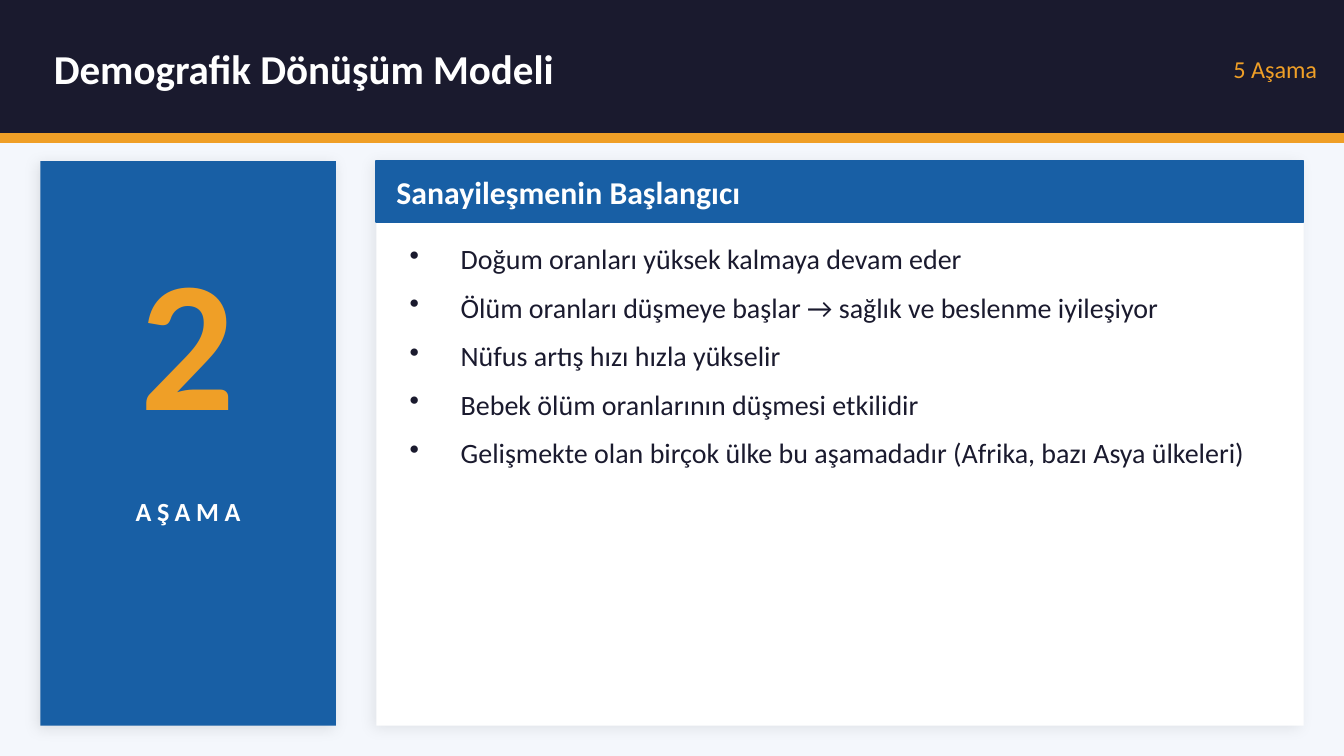
from lxml import etree
from pptx import Presentation
from pptx.dml.color import RGBColor
from pptx.enum import shapes, text
from pptx.oxml import ns
from pptx.util import Pt

# Content
TITLE = "Demografik Dönüşüm Modeli"
STAGE_COUNT = "5 Aşama"
STAGE_NUMBER = "2"
STAGE_LABEL = "AŞAMA"
CARD_HEADING = "Sanayileşmenin Başlangıcı"
CARD_POINTS = [
    "Doğum oranları yüksek kalmaya devam eder",
    "Ölüm oranları düşmeye başlar → sağlık ve beslenme iyileşiyor",
    "Nüfus artış hızı hızla yükselir",
    "Bebek ölüm oranlarının düşmesi etkilidir",
    "Gelişmekte olan birçok ülke bu aşamadadır (Afrika, bazı Asya ülkeleri)",
]

# Style and layout, in points
COLORS = {"navy": "1A1A2E", "orange": "EF9F27", "blue": "185FA5",
          "white": "FFFFFF", "page": "F4F7FC", "shadow": "000000"}
FONT = "Calibri"
WIDTH, HEIGHT = 720, 405
BAND_HEIGHT, STRIPE_HEIGHT = 72, 4.32
PANEL_TOP, PANEL_HEIGHT = 86.4, 302.4
STAGE_LEFT, STAGE_WIDTH = 21.6, 158.4
CARD_LEFT, CARD_WIDTH = 201.6, 496.8
HEADING_HEIGHT = 32.4
CARD_PAD = 10.8
BULLET_INDENT = 27.36
LEFT, CENTER, RIGHT = (text.PP_ALIGN.LEFT, text.PP_ALIGN.CENTER,
                       text.PP_ALIGN.RIGHT)
MIDDLE, TOP = text.MSO_ANCHOR.MIDDLE, text.MSO_ANCHOR.TOP


def color(name):
    return RGBColor.from_string(COLORS[name])


def add_shadow(panel, opacity):
    effects = panel._element.spPr.find(ns.qn("a:effectLst"))
    outer = etree.SubElement(
        effects, ns.qn("a:outerShdw"), blurRad=str(Pt(8)), dist=str(Pt(2)),
        dir=str(135 * 60000), algn="bl", rotWithShape="0")
    tint = etree.SubElement(outer, ns.qn("a:srgbClr"), val=COLORS["shadow"])
    etree.SubElement(tint, ns.qn("a:alpha"), val=str(opacity * 1000))


def add_panel(slide, box, fill, outlined=True, shadow_opacity=0):
    panel = slide.shapes.add_shape(shapes.MSO_SHAPE.RECTANGLE, *map(Pt, box))
    panel.shadow.inherit = False
    panel.fill.solid()
    panel.fill.fore_color.rgb = color(fill)
    if outlined:
        panel.line.color.rgb = color(fill)
        panel.line.width = Pt(1)
    else:
        panel.line.fill.background()
    if shadow_opacity:
        add_shadow(panel, shadow_opacity)


def add_bullet(paragraph):
    properties = paragraph._p.get_or_add_pPr()
    properties.set("marL", str(Pt(BULLET_INDENT)))
    properties.set("indent", str(-Pt(BULLET_INDENT)))
    etree.SubElement(properties, ns.qn("a:buChar"), char="•")


def write(holder, lines, size, ink, bold=False, align=LEFT, anchor=MIDDLE,
          inset=True, bullets=False, spacing=0):
    frame = holder.text_frame
    frame_format = {"word_wrap": True, "vertical_anchor": anchor,
                    "auto_size": text.MSO_AUTO_SIZE.NONE}
    if not inset:
        for side in ("left", "top", "right", "bottom"):
            frame_format[f"margin_{side}"] = 0
    for name, value in frame_format.items():
        setattr(frame, name, value)

    for index, line in enumerate(lines):
        paragraph = frame.add_paragraph() if index else frame.paragraphs[0]
        paragraph.alignment = align
        if bullets:
            paragraph.space_after = Pt(8)
            add_bullet(paragraph)
        run = paragraph.add_run()
        run.text = line
        for name, value in {"name": FONT, "size": Pt(size),
                            "bold": bold}.items():
            setattr(run.font, name, value)
        run.font.color.rgb = color(ink)
        if spacing:
            run._r.get_or_add_rPr().set("spc", str(spacing * 100))


def add_text(slide, box, lines, size, ink, **options):
    write(slide.shapes.add_textbox(*map(Pt, box)), lines, size, ink, **options)


def add_title(slide, box):
    title = slide.shapes.title
    title.left, title.top, title.width, title.height = map(Pt, box)
    # Bring the title in front of the header band
    slide.shapes._spTree.append(title._element)
    write(title, [TITLE], 22, "white", bold=True, inset=False)


def main():
    deck = Presentation()
    deck.slide_width, deck.slide_height = Pt(WIDTH), Pt(HEIGHT)
    slide = deck.slides.add_slide(deck.slide_layouts[5])
    slide.background.fill.solid()
    slide.background.fill.fore_color.rgb = color("page")

    # Header
    add_panel(slide, (0, 0, WIDTH, BAND_HEIGHT), "navy")
    add_panel(slide, (0, BAND_HEIGHT, WIDTH, STRIPE_HEIGHT), "orange")
    add_title(slide, (28.8, 7.2, 540, 59.04))
    add_text(slide, (561.6, 7.2, 144, 59.04), [STAGE_COUNT], 13, "orange",
             align=RIGHT, inset=False)

    # Stage panel
    add_panel(slide, (STAGE_LEFT, PANEL_TOP, STAGE_WIDTH, PANEL_HEIGHT),
              "blue", outlined=False, shadow_opacity=10)
    add_text(slide, (STAGE_LEFT, 108, STAGE_WIDTH, 144), [STAGE_NUMBER],
             100, "orange", bold=True, align=CENTER)
    add_text(slide, (STAGE_LEFT, 252, STAGE_WIDTH, 43.2), [STAGE_LABEL],
             14, "white", bold=True, align=CENTER, spacing=3)

    # Card with heading and bullet points
    text_left, text_width = CARD_LEFT + CARD_PAD, CARD_WIDTH - 2 * CARD_PAD
    add_panel(slide, (CARD_LEFT, PANEL_TOP, CARD_WIDTH, PANEL_HEIGHT),
              "white", outlined=False, shadow_opacity=8)
    add_panel(slide, (CARD_LEFT, PANEL_TOP, CARD_WIDTH, HEADING_HEIGHT), "blue")
    add_text(slide, (text_left, 87.84, text_width, 30.24), [CARD_HEADING],
             17, "white", bold=True, inset=False)
    add_text(slide, (text_left, 126, text_width, 252), CARD_POINTS,
             15, "navy", anchor=TOP, bullets=True)

    deck.save("out.pptx")


if __name__ == "__main__":
    main()
